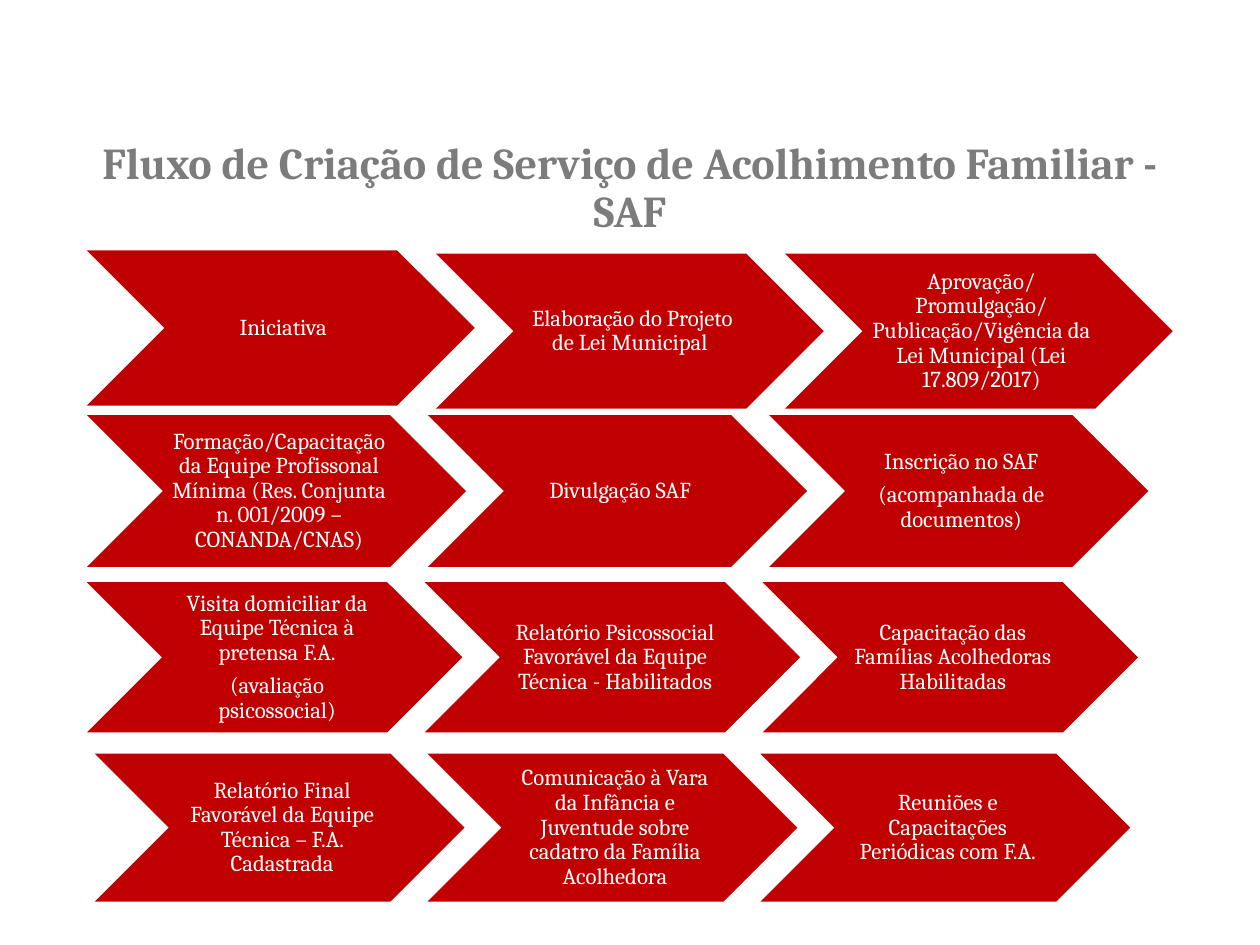
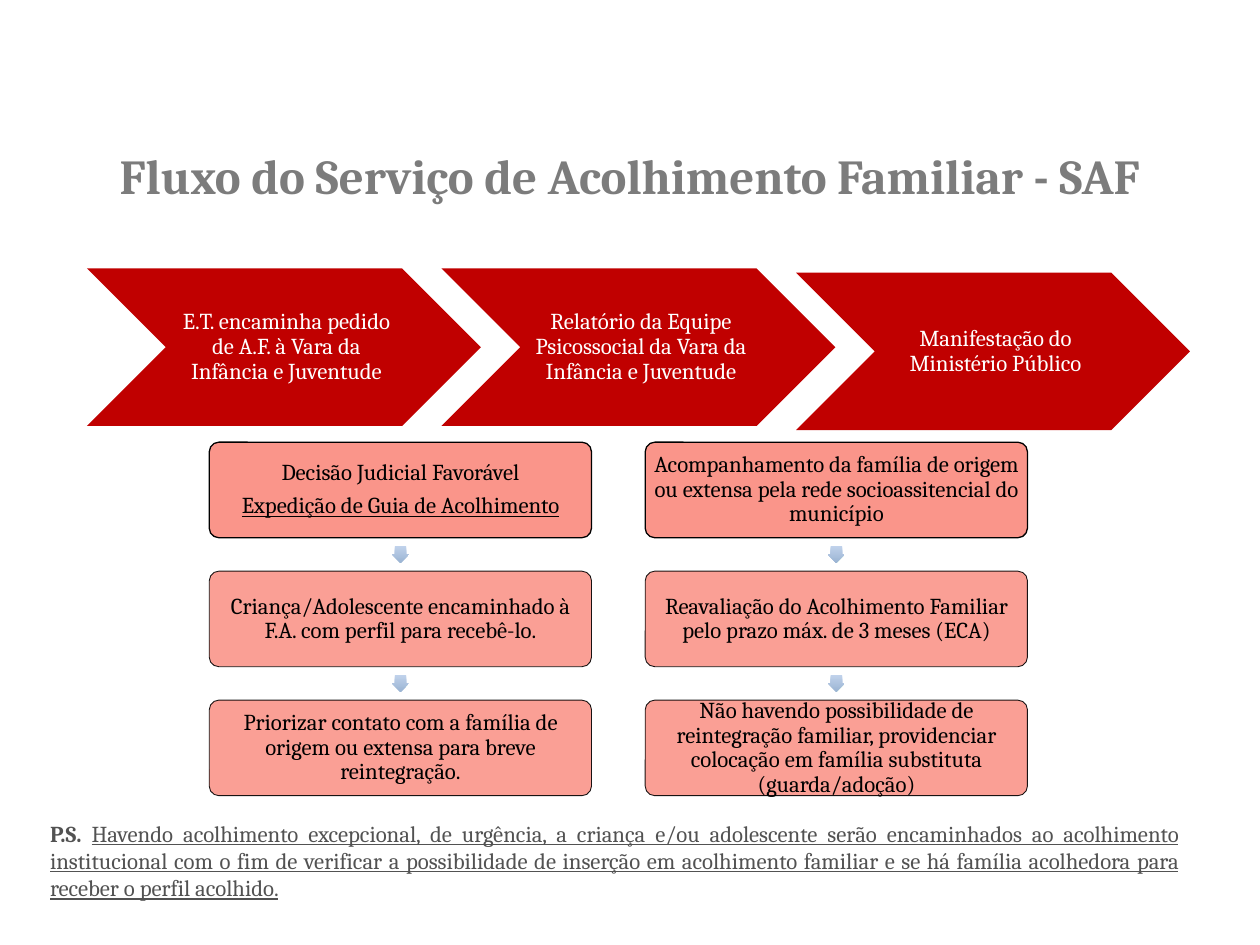
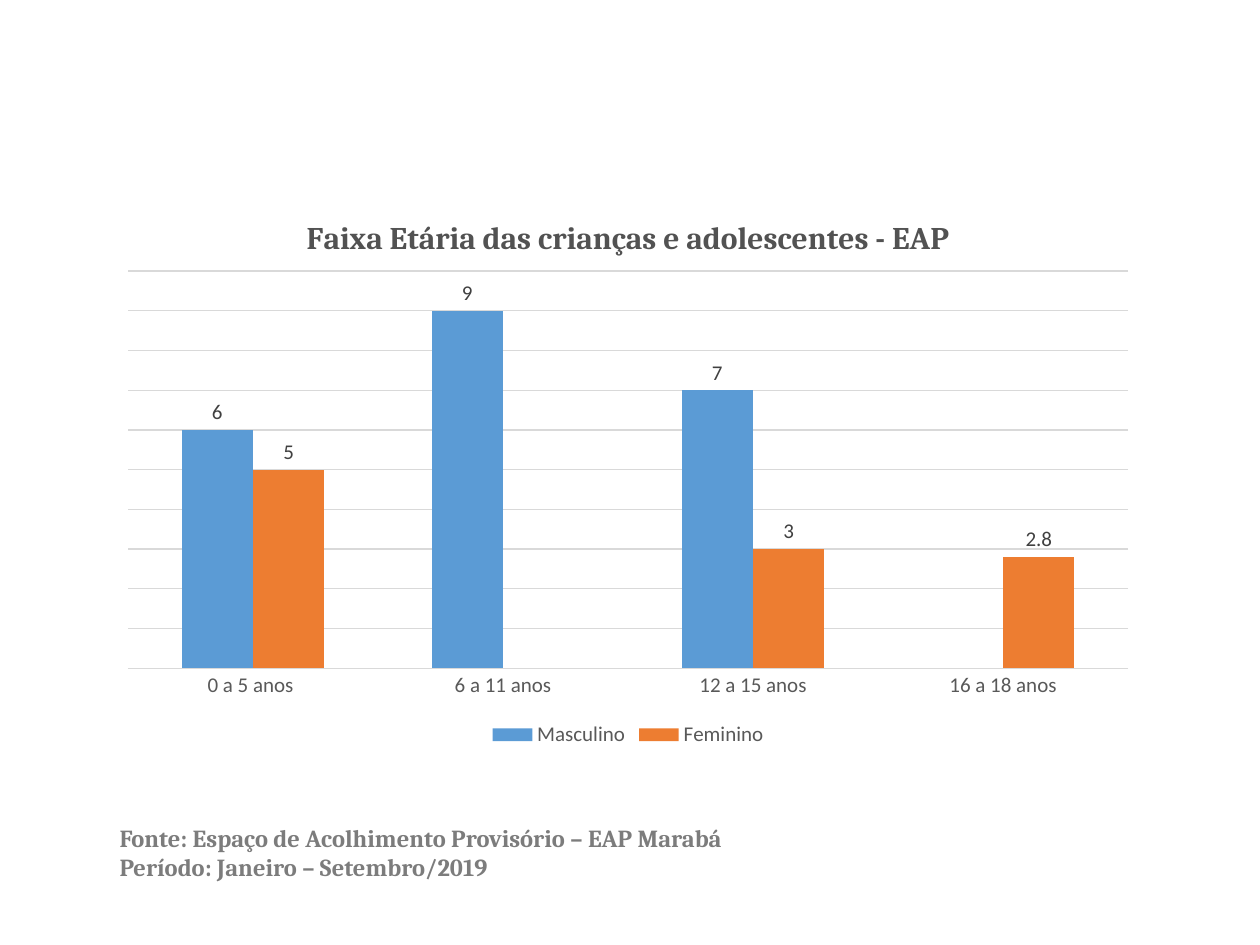
"""Build three slides on the foster care service."""
from dataclasses import dataclass

from lxml.etree import SubElement
from pptx import Presentation
from pptx.chart.chart import Chart
from pptx.chart.data import CategoryChartData as ChartData
from pptx.dml.color import RGBColor
from pptx.enum.chart import XL_CHART_TYPE as Kind
from pptx.enum.chart import XL_LABEL_POSITION as Spot
from pptx.enum.chart import XL_LEGEND_POSITION as Side
from pptx.enum.chart import XL_TICK_MARK as Tick
from pptx.enum.shapes import MSO_SHAPE as Form
from pptx.enum.text import MSO_ANCHOR as Anchor
from pptx.enum.text import MSO_AUTO_SIZE as Fit
from pptx.enum.text import PP_ALIGN as Align
from pptx.oxml import parse_xml
from pptx.oxml.ns import nsdecls, qn
from pptx.shapes.autoshape import Shape
from pptx.slide import Slide
from pptx.text.text import Font, TextFrame
from pptx.util import Pt

RED, PINK = "C00000", "FA958A"
WHITE, BLACK = "FFFFFF", "000000"
GREY, DARK, AXIS, GRID = "7C7C7C", "525252", "595959", "D9D9D9"
SERIF, SANS = "Cambria", "Calibri"
BODY = 13


@dataclass(frozen=True)
class Row:
    """One row of chevrons; drops lower single steps."""

    left: float
    top: float
    width: float
    steps: tuple[str, ...]
    drops: tuple[float, ...] = (0, 0, 0)


STEPS = (
    Row(49.7, 143.1, 221.6, (
        "Iniciativa",
        "Elaboração do Projeto de Lei Municipal ",
        "Aprovação/Promulgação/Publicação/Vigência da Lei Municipal (Lei 17.809/2017)",
    ), (0, 1.8, 1.8)),
    Row(49.7, 237.3, 216.6, (
        "Formação/Capacitação da Equipe Profissonal Mínima "
        "(Res. Conjunta n. 001/2009 – CONANDA/CNAS)",
        "Divulgação SAF",
        "Inscrição no SAF\n(acompanhada de documentos)",
    )),
    Row(49.7, 332.7, 214.5, (
        "Visita domiciliar da Equipe Técnica à pretensa F.A.\n(avaliação psicossocial)",
        "Relatório Psicossocial Favorável da Equipe Técnica - Habilitados",
        "Capacitação das Famílias Acolhedoras Habilitadas",
    )),
    Row(54.2, 430.7, 211.3, (
        "Relatório Final Favorável da Equipe Técnica – F.A. Cadastrada",
        "Comunicação à Vara da Infância e Juventude sobre cadatro da Família Acolhedora",
        "Reuniões e Capacitações Periódicas com F.A.",
    )),
)
COURT = Row(49.7, 153.4, 225.1, (
    "E.T. encaminha pedido de A.F. à Vara da Infância e Juventude",
    "Relatório da Equipe Psicossocial da Vara da Infância e Juventude",
    "Manifestação do Ministério Público",
), (0, 0, 2.4))
CARE = (
    (
        "Decisão Judicial Favorável\nExpedição de Guia de Acolhimento",
        "Criança/Adolescente encaminhado à F.A. com perfil para recebê-lo.",
        "Priorizar contato com a família de origem ou extensa para breve reintegração.",
    ),
    (
        "Acompanhamento da família de origem ou extensa pela rede "
        "socioassitencial do município",
        "Reavaliação do Acolhimento Familiar pelo prazo máx. de 3 meses (ECA)",
        "Não havendo possibilidade de reintegração familiar, providenciar "
        "colocação em família substituta (guarda/adoção)",
    ),
)
NOTE = (
    "Havendo acolhimento excepcional, de urgência, a criança e/ou adolescente "
    "serão encaminhados ao acolhimento institucional com o fim de verificar a "
    "possibilidade de inserção em acolhimento familiar e se há família "
    "acolhedora para receber o perfil acolhido."
)


def tint(code: str) -> RGBColor:
    """Turn a hex string into a colour."""
    return RGBColor.from_string(code)


def style(font: Font, size: float, code: str, name: str = SERIF, bold: bool = False) -> None:
    """Set the face, size, colour and weight of a font."""
    font.name, font.size, font.bold = name, Pt(size), bold
    font.color.rgb = tint(code)


def pad(frame: TextFrame, left: float, top: float, right: float, base: float) -> None:
    """Set the four insets of a frame."""
    frame.margin_left, frame.margin_top = Pt(left), Pt(top)
    frame.margin_right, frame.margin_bottom = Pt(right), Pt(base)


def head(slide: Slide, text: str, size: float, base: float) -> None:
    """Place and format the slide title."""
    title = slide.shapes.title
    title.left, title.top, title.width, title.height = Pt(49.7), Pt(31), Pt(620.6), Pt(104.4)
    frame = title.text_frame
    frame.text = text
    frame.auto_size, frame.word_wrap = Fit.NONE, True
    frame.vertical_anchor = Anchor.BOTTOM
    pad(frame, 7.2, 0, 7.2, base)
    para = frame.paragraphs[0]
    para.alignment, para.line_spacing = Align.CENTER, 0.9
    style(para.font, size, GREY, bold=True)


def form(slide: Slide, kind: Form, left: float, top: float, width: float, height: float) -> Shape:
    """Add a preset shape with no shadow and no line."""
    shape = slide.shapes.add_shape(kind, Pt(left), Pt(top), Pt(width), Pt(height))
    shape.shadow.inherit = False
    shape.line.fill.background()
    return shape


def label(shape: Shape, text: str, code: str) -> None:
    """Fill a shape with centred paragraphs."""
    frame = shape.text_frame
    frame.text = text
    frame.word_wrap, frame.vertical_anchor = True, Anchor.MIDDLE
    for rank, para in enumerate(frame.paragraphs):
        para.alignment, para.line_spacing = Align.CENTER, 0.9
        if rank:
            para.space_before = Pt(4.9)
        style(para.font, BODY, code)


def chain(slide: Slide, row: Row) -> None:
    """Draw a row of chevrons, each lapping a tenth of the last."""
    for rank, (text, drop) in enumerate(zip(row.steps, row.drops)):
        left = row.left + rank * 0.9 * row.width
        step = form(slide, Form.CHEVRON, left, row.top + drop, row.width, 0.4 * row.width)
        step.fill.solid()
        step.fill.fore_color.rgb = tint(RED)
        label(step, text, WHITE)
        pad(step.text_frame, 4.1, 1.4, 1.4, 1.4)


def card(slide: Slide, left: float, top: float, width: float, height: float,
         text: str, first: bool) -> Shape:
    """Draw a rounded card; only the first is opaque."""
    shape = form(slide, Form.ROUNDED_RECTANGLE, left, top, width, height)
    shape.adjustments[0] = 0.1
    shape.fill.solid()
    shape.fill.fore_color.rgb = tint(PINK)
    shape.line.color.rgb = tint(BLACK)
    shape.line.width = Pt(0.75 if first else 0.5)
    if not first:
        for node in list(shape.element.spPr.iter(qn("a:srgbClr"))):
            SubElement(node, qn("a:alpha"), val="90000")
    label(shape, text, BLACK)
    pad(shape.text_frame, 1.4, 1.4, 1.4, 1.4)
    return shape


def arrow(slide: Slide, mid: float, level: float) -> None:
    """Draw a small arrow pointing down, centred on a point."""
    size = 9.6
    shape = form(slide, Form.RIGHT_ARROW, mid - size / 2, level - size / 2, size, size)
    shape.rotation = 90
    shape.adjustments[0], shape.adjustments[1] = 0.67, 0.5
    shape.fill.gradient()
    shape.fill.gradient_angle = 0
    for stop, code in zip(shape.fill.gradient_stops, ("C0D2EB", "9BB4D3")):
        stop.color.rgb = tint(code)


def stack(slide: Slide, left: float, texts: tuple[str, ...]) -> list[Shape]:
    """Draw a column of cards with arrows in the gaps."""
    top, width, height, pitch = 252.7, 218.4, 54.6, 73.7
    cards = []
    for rank, text in enumerate(texts):
        level = top + rank * pitch
        if rank:
            arrow(slide, left + width / 2, level - (pitch - height) / 2)
        cards.append(card(slide, left, level, width, height, text, rank == 0))
    return cards


def note(slide: Slide, left: float, top: float, width: float, height: float) -> TextFrame:
    """Add a wrapping text box and return its frame."""
    frame = slide.shapes.add_textbox(Pt(left), Pt(top), Pt(width), Pt(height)).text_frame
    frame.word_wrap = True
    return frame


def trend(chart: Chart) -> None:
    """Turn the last series into a line that the legend leaves out."""
    space = chart.element
    bars = next(space.iter(qn("c:barChart")))
    group = bars.findall(qn("c:ser"))[-1]
    for node in group.findall(qn("c:invertIfNegative")):
        group.remove(node)
    group.find(qn("c:tx")).addnext(
        parse_xml(f'<c:marker {nsdecls("c")}><c:symbol val="none"/></c:marker>'))
    lines = parse_xml(
        f'<c:lineChart {nsdecls("c")}><c:grouping val="standard"/>'
        '<c:varyColors val="0"/><c:marker val="1"/></c:lineChart>')
    lines.insert(2, group)
    for axis in bars.findall(qn("c:axId")):
        SubElement(lines, qn("c:axId"), val=axis.get("val"))
    bars.addnext(lines)
    line = chart.plots[1].series[0]
    line.smooth = False
    line.format.line.color.rgb, line.format.line.width = tint("A5A5A5"), Pt(2.25)
    next(space.iter(qn("c:legendPos"))).addnext(parse_xml(
        f'<c:legendEntry {nsdecls("c")}><c:idx val="2"/><c:delete val="1"/></c:legendEntry>'))


def place(chart: Chart, left: float, top: float, width: float, height: float) -> None:
    """Fix the inner plot area, in shares of the chart."""
    area = next(chart.element.iter(qn("c:plotArea")))
    for node in area.findall(qn("c:layout")):
        area.remove(node)
    area.insert(0, parse_xml(
        f'<c:layout {nsdecls("c")}><c:manualLayout><c:layoutTarget val="inner"/>'
        '<c:xMode val="edge"/><c:yMode val="edge"/>'
        f'<c:x val="{left}"/><c:y val="{top}"/><c:w val="{width}"/><c:h val="{height}"/>'
        '</c:manualLayout></c:layout>'))


def graph(slide: Slide) -> None:
    """Add the column chart of ages."""
    data = ChartData()
    data.categories = ["0 a 5 anos ", "6 a 11 anos", "12 a 15 anos", "16 a 18 anos"]
    data.add_series("Masculino", (6, 9, 7, None))
    data.add_series("Feminino", (5, None, 3, 2.8))
    data.add_series("Series 3", (None,) * 4)
    chart = slide.shapes.add_chart(
        Kind.COLUMN_CLUSTERED, Pt(61.2), Pt(110.2), Pt(595.4), Pt(319.7), data).chart
    style(chart.font, 10, BLACK, SANS)

    title = chart.chart_title
    title.include_in_layout = False
    title.text_frame.text = "Faixa Etária das crianças e adolescentes - EAP"
    style(title.text_frame.paragraphs[0].font, 18, DARK, bold=True)

    chart.has_legend = True
    chart.legend.position, chart.legend.include_in_layout = Side.BOTTOM, False
    style(chart.legend.font, 12, AXIS, SANS)

    base, scale = chart.category_axis, chart.value_axis
    base.major_tick_mark = base.minor_tick_mark = Tick.NONE
    style(base.tick_labels.font, 12, AXIS, SANS)
    scale.visible = False
    scale.minimum_scale, scale.maximum_scale, scale.major_unit = 0, 10, 1
    for line in (base.format.line, scale.major_gridlines.format.line):
        line.color.rgb, line.width = tint(GRID), Pt(0.75)

    trend(chart)
    place(chart, 0.02, 0.14, 0.96, 0.71)
    plot = chart.plots[0]
    plot.gap_width, plot.overlap, plot.vary_by_categories = 150, 0, False
    for group, code in zip(plot.series, ("5B9BD5", "ED7D31")):
        group.format.fill.solid()
        group.format.fill.fore_color.rgb = tint(code)
        group.invert_if_negative = False
        tags = group.data_labels
        tags.show_value, tags.position = True, Spot.OUTSIDE_END
        style(tags.font, 12, "404040", SANS)


def main() -> None:
    """Build and save the slides."""
    deck = Presentation()
    deck.slide_width, deck.slide_height = Pt(720), Pt(540)
    titled, blank = deck.slide_layouts[5], deck.slide_layouts[6]

    slide = deck.slides.add_slide(titled)
    head(slide, "Fluxo de Criação de Serviço de Acolhimento Familiar - SAF", 25.2, 0)
    for row in STEPS:
        chain(slide, row)

    slide = deck.slides.add_slide(titled)
    head(slide, "Fluxo do Serviço de Acolhimento Familiar - SAF", 27.9, 18.2)
    chain(slide, COURT)
    stacks = [stack(slide, 119.6 + rank * 249.1, texts) for rank, texts in enumerate(CARE)]
    stacks[0][0].text_frame.paragraphs[1].font.underline = True
    para = note(slide, 21.5, 464.7, 658.8, 54.7).paragraphs[0]
    para.alignment = Align.JUSTIFY
    style(para.font, BODY, DARK)
    for text, strong in (("P.S. ", True), (NOTE, False)):
        run = para.add_run()
        run.text = text
        run.font.bold, run.font.underline = strong, not strong

    slide = deck.slides.add_slide(blank)
    graph(slide)
    frame = note(slide, 61.2, 466.8, 450, 41)
    frame.text = ("Fonte: Espaço de Acolhimento Provisório – EAP Marabá\n"
                  "Período: Janeiro – Setembro/2019")
    for para in frame.paragraphs:
        para.alignment = Align.JUSTIFY
        style(para.font, 14, GREY, bold=True)

    deck.save("out.pptx")


if __name__ == "__main__":
    main()
